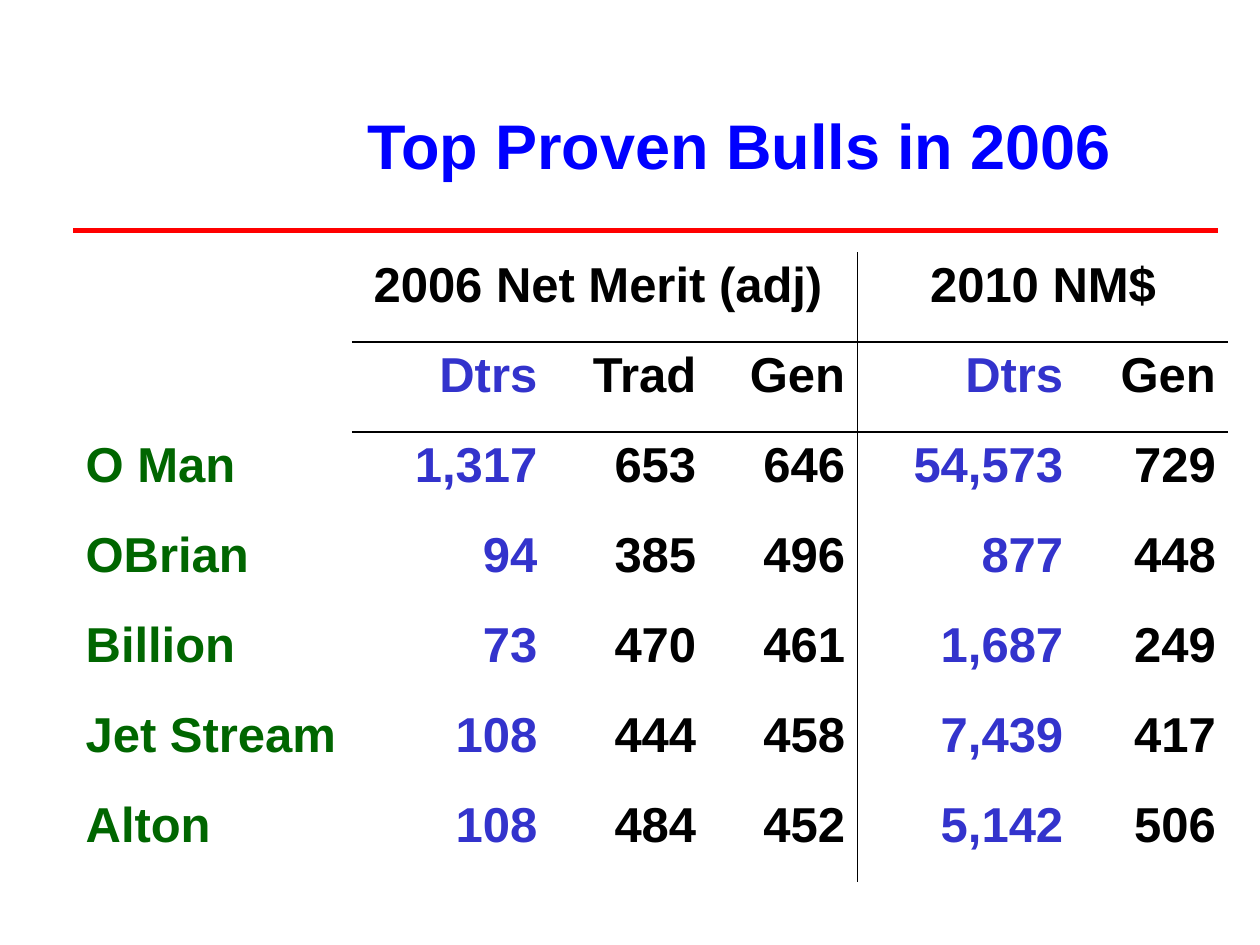
from dataclasses import dataclass

from lxml.etree import SubElement
from pptx import Presentation
from pptx.dml.color import RGBColor
from pptx.enum.shapes import MSO_CONNECTOR
from pptx.enum.text import MSO_ANCHOR, PP_ALIGN
from pptx.oxml.ns import qn
from pptx.util import Inches, Pt


@dataclass(frozen=True)
class Theme:
    font: str = "Arial"
    title: str = "0000FF"
    rule: str = "FF0000"
    text: str = "000000"
    daughters: str = "3333CC"
    bull: str = "006600"
    title_size: int = 36
    table_size: int = 28
    rule_width: int = 3
    border_width: int = 1


THEME = Theme()

COLUMN_WIDTHS = [2.21, 1.57, 1.26, 1.18, 1.73, 1.21]
# First column, last column and label of each merged heading
GROUPS = [(1, 3, "2006 Net Merit (adj) "), (4, 5, "2010 NM$")]
ROWS = [
    ["", "Dtrs", "Trad", "Gen", "Dtrs", "Gen"],
    ["O Man", "1,317", "653", "646", "54,573", "729"],
    ["OBrian", "94", "385", "496", "877", "448"],
    ["Billion", "73", "470", "461", "1,687", "249"],
    ["Jet Stream", "108", "444", "458", "7,439", "417"],
    ["Alton", "108", "484", "452", "5,142", "506"],
]
COLUMN_COLORS = [THEME.bull, THEME.daughters, THEME.text,
                 THEME.text, THEME.daughters, THEME.text]
DIVIDER_COLUMN = 4  # the vertical line runs on the left of this column
HEADING_ROWS = 2


def write_text(text_frame, text, *, size, color, align):
    paragraph = text_frame.paragraphs[0]
    paragraph.alignment = align
    run = paragraph.add_run()
    run.text = text
    run.font.name = THEME.font
    run.font.size = Pt(size)
    run.font.bold = True
    run.font.color.rgb = RGBColor.from_string(color)


def set_borders(cell, visible_sides):
    """Draw the given sides (L, R, T, B) and hide the others."""
    properties = cell._tc.get_or_add_tcPr()
    for side in "LRTB":
        line = SubElement(properties, qn(f"a:ln{side}"),
                          w=str(Pt(THEME.border_width)))
        if side in visible_sides:
            fill = SubElement(line, qn("a:solidFill"))
            SubElement(fill, qn("a:srgbClr"), val=THEME.text)
        else:
            SubElement(line, qn("a:noFill"))


def border_sides(row, first_column, last_column):
    rules = {
        "L": first_column == DIVIDER_COLUMN,
        "R": last_column == DIVIDER_COLUMN - 1,
        "T": first_column > 0 and 1 <= row <= HEADING_ROWS,
        "B": first_column > 0 and row < HEADING_ROWS,
    }
    return [side for side, visible in rules.items() if visible]


def add_title(slide, left, top, width, height):
    title = slide.shapes.title
    title.left, title.top, title.width, title.height = left, top, width, height
    title.text_frame.vertical_anchor = MSO_ANCHOR.MIDDLE
    write_text(title.text_frame, "Top Proven Bulls in 2006",
               size=THEME.title_size, color=THEME.title, align=PP_ALIGN.CENTER)


def add_rule(slide, left, top, width):
    rule = slide.shapes.add_connector(
        MSO_CONNECTOR.STRAIGHT, left, top, left + width, top)
    rule.line.color.rgb = RGBColor.from_string(THEME.rule)
    rule.line.width = Pt(THEME.rule_width)
    SubElement(rule._element.spPr, qn("a:effectLst"))


def add_merit_table(slide, left, top, width, height):
    row_count = len(ROWS) + 1
    table = slide.shapes.add_table(
        row_count, len(COLUMN_WIDTHS), left, top, width, height).table
    table.first_row = table.horz_banding = False
    for column, share in zip(table.columns, COLUMN_WIDTHS):
        column.width = int(width * share / sum(COLUMN_WIDTHS))

    # Merged headings
    for first, last, label in GROUPS:
        heading = table.cell(0, first)
        heading.merge(table.cell(0, last))
        write_text(heading.text_frame, label, size=THEME.table_size,
                   color=THEME.text, align=PP_ALIGN.CENTER)

    # Column labels and bulls
    for row, values in enumerate(ROWS, start=1):
        for column, value in enumerate(values):
            if value:
                write_text(table.cell(row, column).text_frame, value,
                           size=THEME.table_size, color=COLUMN_COLORS[column],
                           align=PP_ALIGN.RIGHT if column else PP_ALIGN.LEFT)

    # Borders come before the fill in the cell properties
    for row in range(row_count):
        for column in range(len(COLUMN_WIDTHS)):
            cell = table.cell(row, column)
            last = column + cell.span_width - 1 if cell.is_merge_origin else column
            set_borders(cell, border_sides(row, column, last))
            cell.fill.background()


def main():
    presentation = Presentation()
    presentation.slide_width = Inches(10)
    presentation.slide_height = Inches(7.5)
    slide = presentation.slides.add_slide(presentation.slide_layouts[5])
    add_rule(slide, Inches(0.58), Inches(1.83), Inches(9.09))
    add_title(slide, Inches(2.72), Inches(0.52), Inches(6.3), Inches(1.25))
    add_merit_table(slide, Inches(0.58), Inches(2), Inches(9.17), Inches(5))
    presentation.save("out.pptx")


if __name__ == "__main__":
    main()
